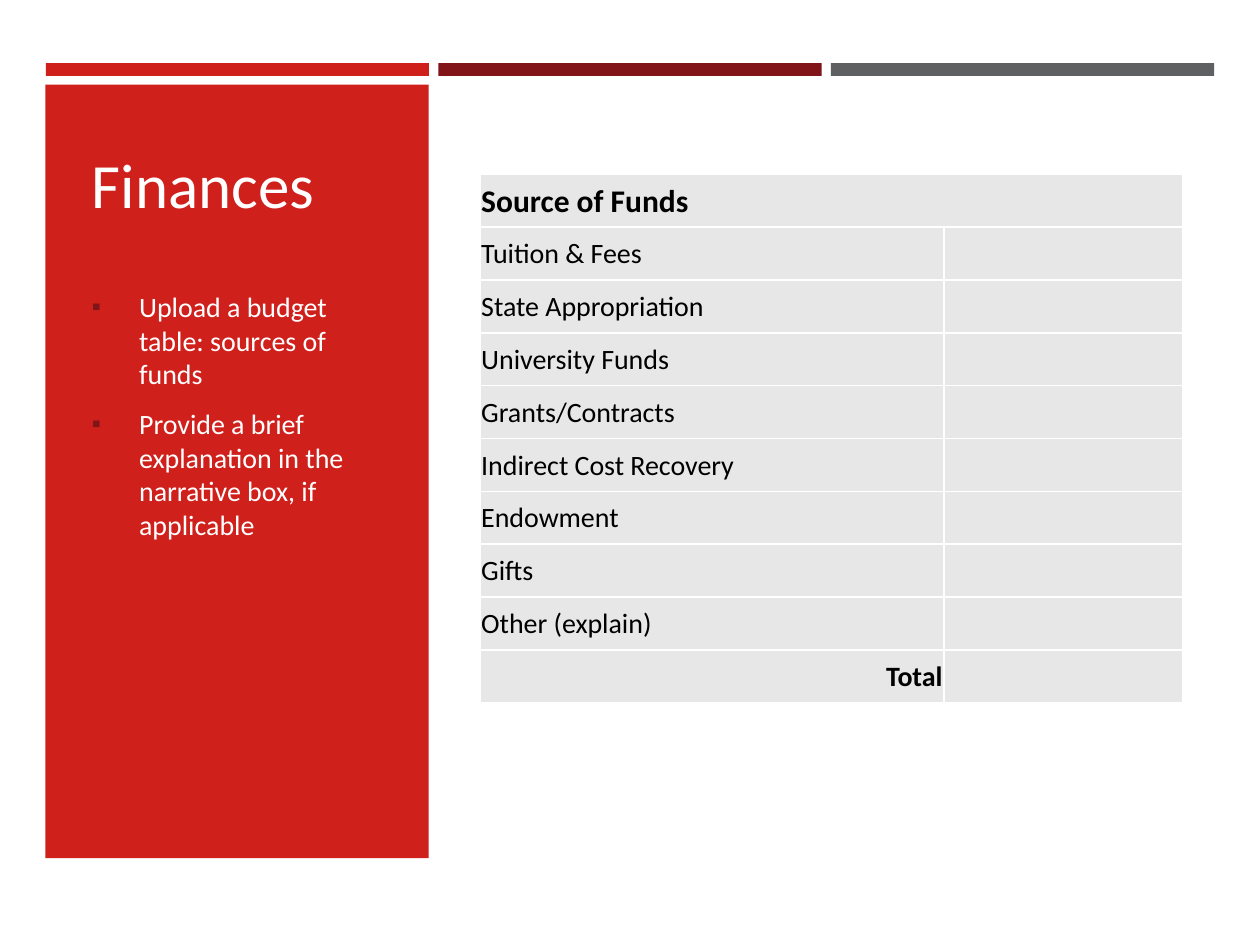
"""Build the Finances slide with a red side panel and a table of fund sources."""
import pptx
import pptx.dml.color
import pptx.enum.shapes
import pptx.enum.text
import pptx.oxml
import pptx.oxml.ns
import pptx.util

Pt = pptx.util.Pt
RGBColor = pptx.dml.color.RGBColor
PP_ALIGN = pptx.enum.text.PP_ALIGN
MIDDLE = pptx.enum.text.MSO_ANCHOR.MIDDLE

BLACK = RGBColor(0x00, 0x00, 0x00)
WHITE = RGBColor(0xFF, 0xFF, 0xFF)
RED = RGBColor(0xD0, 0x20, 0x1C)
MAROON = RGBColor(0x81, 0x14, 0x19)
GRAY = RGBColor(0x5F, 0x60, 0x62)
CELL_GRAY = RGBColor(0xE7, 0xE7, 0xE7)
NS = pptx.oxml.ns.nsdecls("a")


def add_block(left, top, width, height, color):
    block = slide.shapes.add_shape(
        pptx.enum.shapes.MSO_SHAPE.RECTANGLE, Pt(left), Pt(top), Pt(width), Pt(height))
    block.shadow.inherit = False
    block.fill.solid()
    block.fill.fore_color.rgb = color
    block.line.fill.background()


def add_text(paragraph, text, size, color, bold=False):
    run = paragraph.add_run()
    run.text = text
    run.font.name = "Calibri"
    run.font.size = Pt(size)
    run.font.bold = bold
    run.font.color.rgb = color


presentation = pptx.Presentation()
presentation.slide_width = Pt(720)
presentation.slide_height = Pt(540)
slide = presentation.slides.add_slide(presentation.slide_layouts[6])
slide.background.fill.solid()
slide.background.fill.fore_color.rgb = BLACK

add_block(0, 0, 720, 540, WHITE)
add_block(26, 48.4, 219, 442, RED)
for column, color in enumerate((RED, MAROON, GRAY)):
    add_block(26.2 + column * 224.3, 36, 219, 7.4, color)

title = slide.shapes.add_textbox(Pt(45.4), Pt(64.8), Pt(187), Pt(80)).text_frame
title.word_wrap = True
title.vertical_anchor = MIDDLE
add_text(title.paragraphs[0], "Finances", 36, WHITE)

instructions = slide.shapes.add_textbox(Pt(45.4), Pt(162), Pt(179), Pt(304)).text_frame
instructions.word_wrap = True
for index, instruction in enumerate((
        "Upload a budget table: sources of funds",
        "Provide a brief explanation in the narrative box, if applicable")):
    paragraph = instructions.add_paragraph() if index else instructions.paragraphs[0]
    properties = paragraph._p.get_or_add_pPr()
    properties.set("marL", str(Pt(27)))
    properties.set("indent", str(-Pt(27)))
    for bullet in (f'<a:buClr {NS}><a:srgbClr val="{MAROON}"/></a:buClr>',
                   f'<a:buSzPct {NS} val="92000"/>',
                   f'<a:buFont {NS} typeface="Calibri"/>',
                   f'<a:buChar {NS} char="▪"/>'):
        properties.append(pptx.oxml.parse_xml(bullet))
    paragraph.space_before = Pt(3.2 if index else 0)
    paragraph.space_after = Pt(6)
    add_text(paragraph, instruction, 16, WHITE)

sources = ("Source of Funds", "Tuition & Fees", "State Appropriation", "University Funds",
           "Grants/Contracts", "Indirect Cost Recovery", "Endowment", "Gifts",
           "Other (explain)", "Total")
funds = slide.shapes.add_table(
    len(sources), 2, Pt(274.3), Pt(99.6), Pt(401.8), Pt(302)).table
funds.columns[0].width = Pt(265)
funds.columns[1].width = Pt(136.8)
for row in funds.rows:
    row.height = Pt(30.2)
for cell in funds.iter_cells():
    cell.margin_left = cell.margin_right = cell.margin_top = Pt(0.7)
    cell.margin_bottom = Pt(0)
    cell.vertical_anchor = MIDDLE
    for side in ("lnL", "lnR", "lnT", "lnB"):
        cell._tc.get_or_add_tcPr().append(pptx.oxml.parse_xml(
            f'<a:{side} {NS} w="{Pt(1)}"><a:solidFill>'
            f'<a:srgbClr val="{WHITE}"/></a:solidFill></a:{side}>'))
    cell.fill.solid()
    cell.fill.fore_color.rgb = CELL_GRAY
funds.cell(0, 0).merge(funds.cell(0, 1))
for index, source in enumerate(sources):
    paragraph = funds.cell(index, 0).text_frame.paragraphs[0]
    is_total = source == "Total"
    if is_total:
        paragraph.alignment = PP_ALIGN.RIGHT
    add_text(paragraph, source, 16 if index else 18, BLACK, index == 0 or is_total)

presentation.save("out.pptx")
